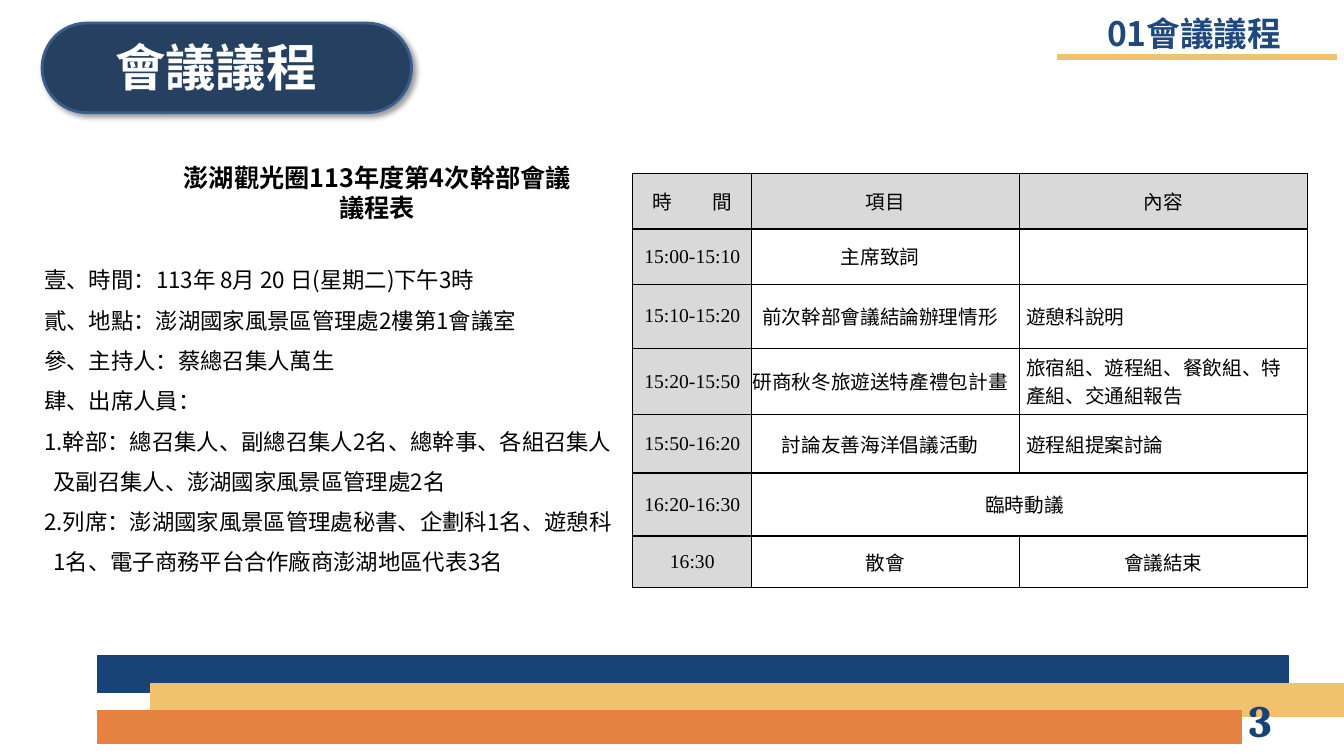
from lxml.etree import SubElement
from pptx import Presentation
from pptx.dml.color import RGBColor
from pptx.enum.shapes import MSO_CONNECTOR, MSO_SHAPE
from pptx.enum.text import MSO_ANCHOR, MSO_AUTO_SIZE, PP_ALIGN
from pptx.oxml import parse_xml
from pptx.oxml.ns import nsdecls, qn
from pptx.util import Pt

SANS, SERIF, TIMES = "Noto Sans CJK SC", "Cambria", "Times New Roman"
NAVY, GOLD, ORANGE, BLACK = "174376", "F0C26D", "E68242", "000000"


def rgb(code):
    return RGBColor.from_string(code)


def style(p, size, color, bold=False, name=SANS, align=PP_ALIGN.LEFT):
    """Format a paragraph's runs; East Asian text always uses the sans font."""
    p.alignment = align
    for r in p.runs:
        r.font.size, r.font.bold, r.font.name = Pt(size), bold, name
        r.font.color.rgb = rgb(color)
        SubElement(r.font._element, qn("a:ea")).set("typeface", SANS)


prs = Presentation()
prs.slide_width, prs.slide_height = Pt(960), Pt(540)
s = prs.slides.add_slide(prs.slide_layouts[1])

# Footer bars
for x, y, w, h, color in [
    (70, 468, 850, 26.5, NAVY),
    (107.5, 488, 852.5, 23.5, GOLD),
    (70, 507.5, 816.5, 23.5, ORANGE),
]:
    sp = s.shapes.add_shape(MSO_SHAPE.RECTANGLE, Pt(x), Pt(y), Pt(w), Pt(h))
    sp.shadow.inherit = False
    sp.fill.solid()
    sp.fill.fore_color.rgb = rgb(color)
    sp.line.color.rgb = rgb(color)
    sp.line.width = Pt(1)

# Page number and section heading
for x, y, w, h, text, size, color, name, align in [
    (892, 494.5, 48, 38, "3", 32, NAVY, SERIF, PP_ALIGN.LEFT),
    (725, 9, 256, 30, "01會議議程", 24, "1F497D", SANS, PP_ALIGN.CENTER),
]:
    tf = s.shapes.add_textbox(Pt(x), Pt(y), Pt(w), Pt(h)).text_frame
    tf.word_wrap = True
    tf.margin_left = tf.margin_right = tf.margin_top = tf.margin_bottom = 0
    tf.text = text
    style(tf.paragraphs[0], size, color, True, name, align)

rule = s.shapes.add_connector(MSO_CONNECTOR.STRAIGHT, Pt(755), Pt(40.5), Pt(955), Pt(40.5))
rule.line.color.rgb = rgb(GOLD)
rule.line.width = Pt(4.25)
SubElement(rule._element.spPr, qn("a:effectLst"))

# Title on its pill
pill = s.shapes.add_shape(MSO_SHAPE.ROUNDED_RECTANGLE, Pt(30), Pt(16.5), Pt(264), Pt(64))
pill.adjustments[0] = 0.5
pill.fill.solid()
pill.fill.fore_color.rgb = rgb("254061")
pill.line.color.rgb = rgb("3A5F8C")
pill.line.width = Pt(2)
pill.element.spPr.append(parse_xml(
    f'<a:effectLst {nsdecls("a")}><a:outerShdw blurRad="{Pt(4)}" dist="{Pt(3)}" dir="2700000">'
    '<a:srgbClr val="000000"><a:alpha val="40000"/></a:srgbClr></a:outerShdw></a:effectLst>'))

title = s.shapes.title
title.left, title.top, title.width, title.height = Pt(75), Pt(22), Pt(235), Pt(48)
title.element.addprevious(pill.element)
tf = title.text_frame
tf.auto_size = MSO_AUTO_SIZE.NONE
tf.vertical_anchor = MSO_ANCHOR.TOP
tf.text = "會議議程"
style(tf.paragraphs[0], 36, "FFFFFF", True)

# Meeting details
headings = ["澎湖觀光圈113年度第4次幹部會議", "議程表"]
details = [
    ("壹、時間：113年 8月 20 日(星期二)下午3時", 0),
    ("貳、地點：澎湖國家風景區管理處2樓第1會議室", 0),
    ("參、主持人：蔡總召集人萬生", 0),
    ("肆、出席人員：", 0),
    ("1.幹部：總召集人、副總召集人2名、總幹事、各組召集人", 0),
    ("及副召集人、澎湖國家風景區管理處2名", 6.5),
    ("2.列席：澎湖國家風景區管理處秘書、企劃科1名、遊憩科", 0),
    ("1名、電子商務平台合作廠商澎湖地區代表3名", 6.5),
]
body = s.placeholders[1]
body.left, body.top, body.width, body.height = Pt(24.5), Pt(112.5), Pt(490), Pt(305)
tf = body.text_frame
tf.auto_size = MSO_AUTO_SIZE.NONE
tf.text = "\n".join(headings + [text for text, _ in details])
indents = [0] * len(headings) + [indent for _, indent in details]
for i, (p, indent) in enumerate(zip(tf.paragraphs, indents)):
    pPr = p._p.get_or_add_pPr()
    pPr.set("marL", str(Pt(indent)))
    pPr.set("indent", "0")
    SubElement(pPr, qn("a:buNone"))
    p.space_before = Pt(0)
    if i < len(headings):
        style(p, 18, BLACK, True, align=PP_ALIGN.CENTER)
    else:
        style(p, 16, BLACK)
        p.line_spacing = 1.5
tf.paragraphs[len(headings) - 1].space_after = Pt(21.5)

# Agenda table
agenda = [
    ("時\t間", "項目", "內容"),
    ("15:00-15:10", "主席致詞", ""),
    ("15:10-15:20", "前次幹部會議結論辦理情形", "遊憩科說明"),
    ("15:20-15:50", "研商秋冬旅遊送特產禮包計畫", "旅宿組、遊程組、餐飲組、特產組、交通組報告"),
    ("15:50-16:20", "討論友善海洋倡議活動", "遊程組提案討論"),
    ("16:20-16:30", "臨時動議", ""),
    ("16:30", "散會", "會議結束"),
]
last = len(agenda) - 1
table = s.shapes.add_table(len(agenda), 3, Pt(452), Pt(124), Pt(482), Pt(296)).table
table.first_row = table.horz_banding = False
for column, width in zip(table.columns, (85, 191, 206)):
    column.width = Pt(width)
for row, height in zip(table.rows, (39.5, 39.5, 46, 47, 42, 45, 37)):
    row.height = Pt(height)

for i, texts in enumerate(agenda):
    for j, text in enumerate(texts):
        cell = table.cell(i, j)
        item = 0 < i < last and j > 0
        note = item and j == 2
        cell.margin_top = cell.margin_bottom = 0
        cell.margin_left = Pt(5 if note else 0)
        cell.margin_right = Pt(7.5 if item else 0)
        cell.vertical_anchor = MSO_ANCHOR.MIDDLE
        cell.text = text
        p = cell.text_frame.paragraphs[0]
        if "\t" in text:
            tabs = SubElement(p._p.get_or_add_pPr(), qn("a:tabLst"))
            SubElement(tabs, qn("a:tab"), pos=str(Pt(42.5)), algn="l")
        style(p, 14, BLACK, name=SANS if j else TIMES,
              align=PP_ALIGN.LEFT if note else PP_ALIGN.CENTER)
        if item:
            p.line_spacing = Pt(20)
        tcPr = cell._tc.get_or_add_tcPr()
        for side in ("L", "R", "T", "B"):
            thick = (i, side) in ((0, "B"), (1, "T"))
            ln = SubElement(tcPr, qn(f"a:ln{side}"), w=str(Pt(1.5 if thick else 1)))
            SubElement(SubElement(ln, qn("a:solidFill")), qn("a:srgbClr"), val=BLACK)
        if i == 0 or j == 0:
            cell.fill.solid()
            cell.fill.fore_color.rgb = rgb("D9D9D9")
        else:
            cell.fill.background()
table.cell(5, 1).merge(table.cell(5, 2))

prs.save("out.pptx")
